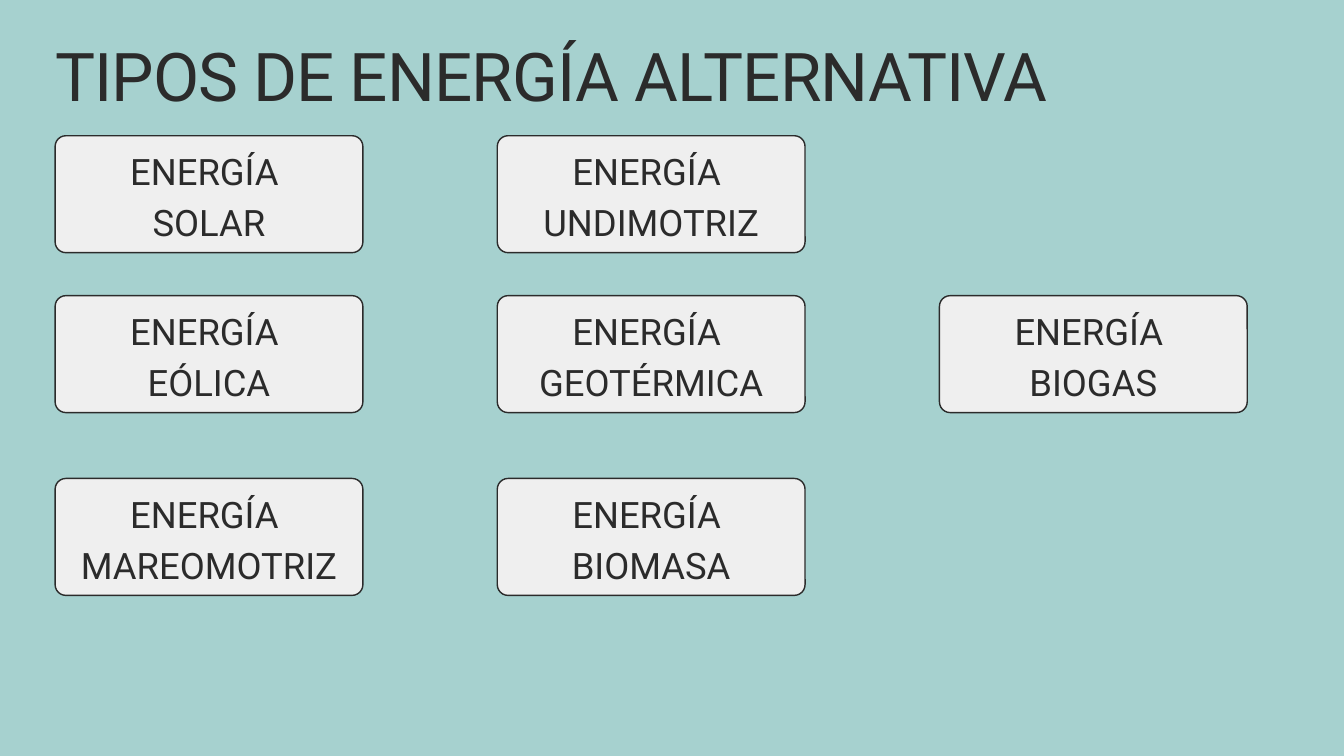
import pptx
import pptx.util
import pptx.dml.color
import pptx.enum.shapes
import pptx.enum.text

Inches = pptx.util.Inches
Pt = pptx.util.Pt
RGBColor = pptx.dml.color.RGBColor
ALIGN = pptx.enum.text.PP_ALIGN

TITLE = "TIPOS DE ENERGÍA ALTERNATIVA"
PREFIX = "ENERGÍA "
ENERGIES = [
    ["SOLAR", "UNDIMOTRIZ", None],
    ["EÓLICA", "GEOTÉRMICA", "BIOGAS"],
    ["MAREOMOTRIZ", "BIOMASA", None],
]

BACKGROUND = RGBColor(0xA6, 0xD1, 0xCF)
CARD_FILL = RGBColor(0xEF, 0xEF, 0xEF)
INK = RGBColor(0x2B, 0x2B, 0x2B)
FONT = "Roboto"

MARGIN = 0.82
COLUMN_STEP = 6.58
ROW_TOPS = [2.02, 4.4, 7.12]
CARD_WIDTH, CARD_HEIGHT = 4.58, 1.74
CORNER = 0.16
LABEL_WIDTH, LABEL_HEIGHT, LABEL_DROP = 7, 1.48, 0.09


def write_text(box, lines, size, spacing, align=ALIGN.LEFT, tracking=None):
    frame = box.text_frame
    frame.word_wrap = True
    frame.auto_size = pptx.enum.text.MSO_AUTO_SIZE.SHAPE_TO_FIT_TEXT
    frame.vertical_anchor = pptx.enum.text.MSO_ANCHOR.TOP
    frame.margin_left = frame.margin_right = 0
    frame.margin_top = frame.margin_bottom = 0
    for index, line in enumerate(lines):
        para = frame.add_paragraph() if index else frame.paragraphs[0]
        para.alignment = align
        para.line_spacing = Pt(spacing)
        para.space_before = Pt(0)
        span = para.add_run()
        span.text = line
        span.font.name = FONT
        span.font.size = Pt(size)
        span.font.color.rgb = INK
        if tracking is not None:
            span.font._element.set("spc", str(round(tracking * 100)))


def add_card(page, left, top):
    card = page.shapes.add_shape(
        pptx.enum.shapes.MSO_SHAPE.ROUNDED_RECTANGLE,
        Inches(left), Inches(top), Inches(CARD_WIDTH), Inches(CARD_HEIGHT))
    card.adjustments[0] = CORNER / CARD_HEIGHT
    card.shadow.inherit = False
    card.fill.solid()
    card.fill.fore_color.rgb = CARD_FILL
    card.line.color.rgb = INK
    card.line.width = Pt(1.5)


def add_label(page, left, top, energy):
    label_left = left + (CARD_WIDTH - LABEL_WIDTH) / 2
    label = page.shapes.add_textbox(
        Inches(label_left), Inches(top + LABEL_DROP),
        Inches(LABEL_WIDTH), Inches(LABEL_HEIGHT))
    write_text(label, [PREFIX, energy], size=39, spacing=54.6, align=ALIGN.CENTER)


def main():
    deck = pptx.Presentation()
    deck.slide_width, deck.slide_height = Inches(20), Inches(11.25)
    page = deck.slides.add_slide(deck.slide_layouts[5])
    page.background.fill.solid()
    page.background.fill.fore_color.rgb = BACKGROUND

    title = page.shapes.title
    title.left, title.top = Inches(MARGIN), Inches(0.58)
    title.width, title.height = Inches(19.78), Inches(1.14)
    write_text(title, [TITLE], size=72, spacing=81.3, tracking=-0.9)

    for top, energies in zip(ROW_TOPS, ENERGIES):
        for column, energy in enumerate(energies):
            if energy:
                left = MARGIN + column * COLUMN_STEP
                add_card(page, left, top)
                add_label(page, left, top, energy)

    deck.save("out.pptx")


if __name__ == "__main__":
    main()
